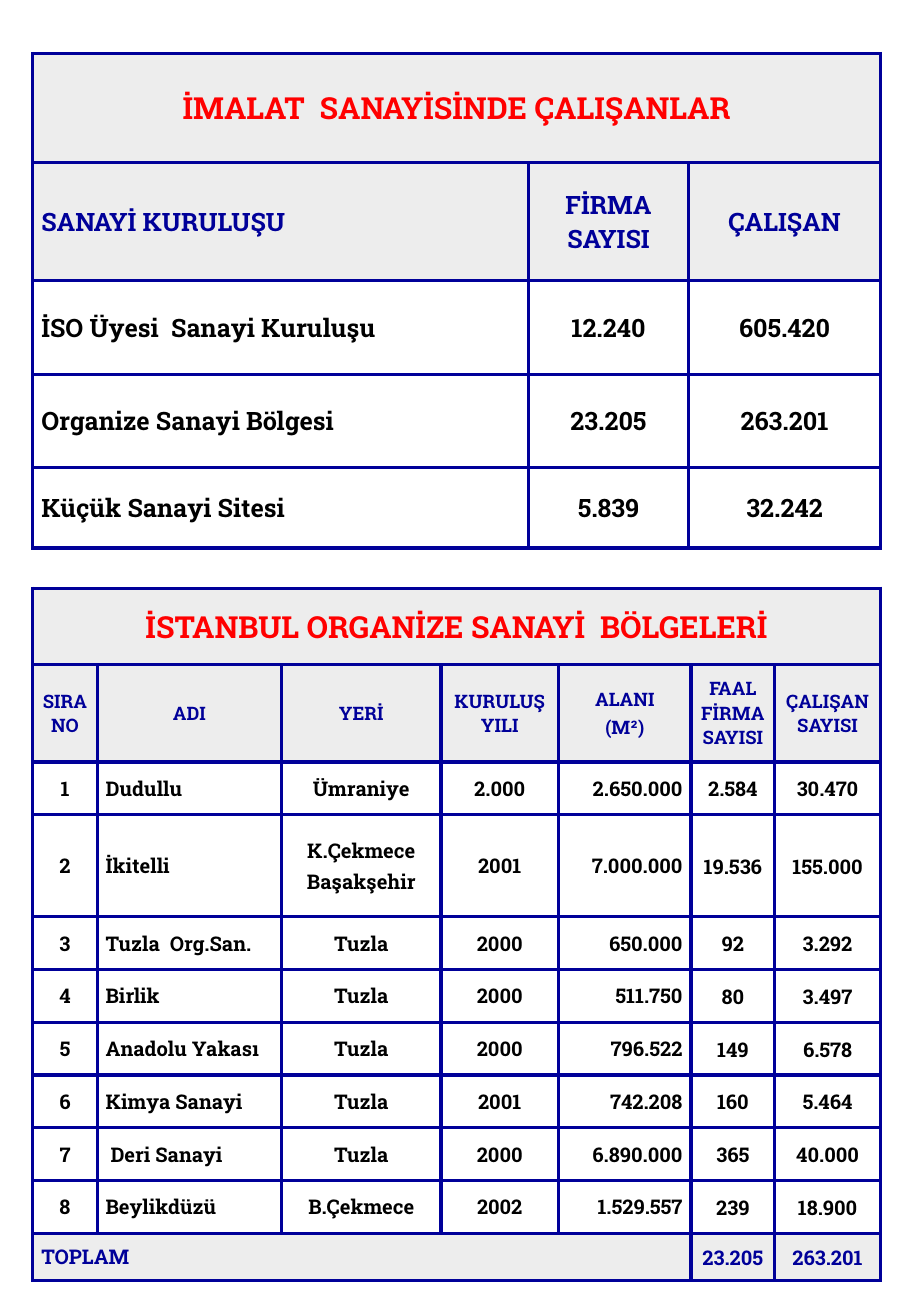
import dataclasses
import typing

import lxml.etree
import pptx
import pptx.dml.color
import pptx.enum.text
import pptx.oxml.ns
import pptx.util

Inches = pptx.util.Inches
Pt = pptx.util.Pt
RGB = pptx.dml.color.RGBColor
PP_ALIGN = pptx.enum.text.PP_ALIGN
ALIGN = {"l": PP_ALIGN.LEFT, "c": PP_ALIGN.CENTER, "r": PP_ALIGN.RIGHT}


@dataclasses.dataclass(frozen=True)
class Theme:
    font: str = "Roboto Slab"
    red: str = "FF0000"
    navy: str = "000099"
    black: str = "000000"
    grey: str = "EDEDED"
    white: str = "FFFFFF"
    title: int = 18
    large: int = 15
    body: int = 12
    small: int = 11
    border: float = 2.25


THEME = Theme()


@dataclasses.dataclass(frozen=True)
class Style:
    size: int
    color: str
    fill: str


TITLE = Style(THEME.title, THEME.red, THEME.grey)
LARGE_HEAD = Style(THEME.large, THEME.navy, THEME.grey)
LARGE_BODY = Style(THEME.large, THEME.black, THEME.white)
SMALL_HEAD = Style(THEME.small, THEME.navy, THEME.grey)
BODY = Style(THEME.body, THEME.black, THEME.white)
TOTAL = Style(THEME.body, THEME.navy, THEME.grey)


@dataclasses.dataclass(frozen=True)
class Row:
    height: float
    style: Style
    aligns: str
    texts: tuple[str, ...]
    span: int = 1
    tight_from: typing.Optional[int] = None


@dataclasses.dataclass(frozen=True)
class Grid:
    top: float
    widths: tuple[float, ...]
    rows: list[Row]
    margin: float
    space_before: int


LEFT = 0.27
PARK_ROW = 3.04 / 7
PARKS = [
    ("1", "Dudullu", "Ümraniye", "2.000", "2.650.000", "2.584", "30.470"),
    ("2", "İkitelli", "K.Çekmece\nBaşakşehir", "2001", "7.000.000", "19.536", "155.000"),
    ("3", "Tuzla  Org.San.", "Tuzla", "2000", "650.000", "92", "3.292"),
    ("4", "Birlik", "Tuzla", "2000", "511.750", "80", "3.497"),
    ("5", "Anadolu Yakası", "Tuzla", "2000", "796.522", "149", "6.578"),
    ("6", "Kimya Sanayi", "Tuzla", "2001", "742.208", "160", "5.464"),
    ("7", " Deri Sanayi", "Tuzla", "2000", "6.890.000", "365", "40.000"),
    ("8", "Beylikdüzü", "B.Çekmece", "2002", "1.529.557", "239", "18.900"),
]

EMPLOYEES = Grid(0.44, (4.08, 1.32, 1.58), [
    Row(0.9, TITLE, "c", ("İMALAT  SANAYİSİNDE ÇALIŞANLAR",), span=3),
    Row(0.97, LARGE_HEAD, "lcc", ("SANAYİ KURULUŞU", "FİRMA SAYISI", "ÇALIŞAN")),
    Row(0.77, LARGE_BODY, "lcc", ("İSO Üyesi  Sanayi Kuruluşu", "12.240", "605.420")),
    Row(0.77, LARGE_BODY, "lcc", ("Organize Sanayi Bölgesi", "23.205", "263.201")),
    Row(0.66, LARGE_BODY, "lcc", ("Küçük Sanayi Sitesi", "5.839", "32.242")),
], margin=0.04, space_before=0)

ZONES = Grid(4.84, (0.53, 1.52, 1.31, 0.97, 1.09, 0.69, 0.87), [
    Row(0.63, TITLE, "c", ("İSTANBUL ORGANİZE SANAYİ  BÖLGELERİ",), span=7),
    Row(0.8, SMALL_HEAD, "ccccccc", (
        "SIRA NO", "ADI", "YERİ", "KURULUŞ YILI", "ALANI\n(M²)",
        "FAAL FİRMA SAYISI", "ÇALIŞAN SAYISI")),
    *(Row(0.84 if "\n" in park[2] else PARK_ROW, BODY, "clccrcc", park, tight_from=5)
      for park in PARKS),
    Row(0.39, TOTAL, "lcc", ("TOPLAM", "23.205", "263.201"), span=5, tight_from=5),
], margin=0.03, space_before=20)


def add_borders(cell) -> None:
    qn = pptx.oxml.ns.qn
    tc_pr = cell._tc.get_or_add_tcPr()
    for side in ("lnL", "lnR", "lnT", "lnB"):
        ln = lxml.etree.SubElement(tc_pr, qn(f"a:{side}"), w=str(Pt(THEME.border)))
        fill = lxml.etree.SubElement(ln, qn("a:solidFill"))
        lxml.etree.SubElement(fill, qn("a:srgbClr"), val=THEME.navy)


def set_space_before(p, percent: int) -> None:
    qn = pptx.oxml.ns.qn
    before = lxml.etree.SubElement(p._p.get_or_add_pPr(), qn("a:spcBef"))
    lxml.etree.SubElement(before, qn("a:spcPct"), val=str(percent * 1000))


def write_cell(cell, text: str, align: str, style: Style, space_before: int) -> None:
    tf = cell.text_frame
    for i, line in enumerate(text.split("\n")):
        p = tf.add_paragraph() if i else tf.paragraphs[0]
        p.alignment = ALIGN[align]
        if space_before:
            set_space_before(p, space_before)
        r = p.add_run()
        r.text = line
        r.font.name = THEME.font
        r.font.size = Pt(style.size)
        r.font.bold = True
        r.font.color.rgb = RGB.from_string(style.color)


def format_cell(cell, fill: str, margin: float, tight: bool) -> None:
    add_borders(cell)
    cell.fill.solid()
    cell.fill.fore_color.rgb = RGB.from_string(fill)
    cell.vertical_anchor = pptx.enum.text.MSO_ANCHOR.MIDDLE
    cell.margin_left = cell.margin_right = Inches(0.01 if tight else 0.07)
    cell.margin_top = Inches(0.01 if tight else margin)
    cell.margin_bottom = Inches(0 if tight else margin)


def draw_grid(slide, grid: Grid) -> None:
    height = sum(row.height for row in grid.rows)
    table = slide.shapes.add_table(
        len(grid.rows), len(grid.widths), Inches(LEFT), Inches(grid.top),
        Inches(sum(grid.widths)), Inches(height)).table
    table.first_row = table.horz_banding = False
    for column, width in zip(table.columns, grid.widths):
        column.width = Inches(width)
    for y, row in enumerate(grid.rows):
        table.rows[y].height = Inches(row.height)
        tight = [row.tight_from is not None and x >= row.tight_from
                 for x in range(len(grid.widths))]
        for x, is_tight in enumerate(tight):
            format_cell(table.cell(y, x), row.style.fill, grid.margin, is_tight)
        if row.span > 1:
            table.cell(y, 0).merge(table.cell(y, row.span - 1))
        for i, (text, align) in enumerate(zip(row.texts, row.aligns)):
            x = i + row.span - 1 if i else 0
            space = 0 if tight[x] else grid.space_before
            write_cell(table.cell(y, x), text, align, row.style, space)


def main() -> None:
    prs = pptx.Presentation()
    prs.slide_width = Inches(7.5)
    prs.slide_height = Inches(10.83)
    slide = prs.slides.add_slide(prs.slide_layouts[6])
    for grid in (EMPLOYEES, ZONES):
        draw_grid(slide, grid)
    prs.save("out.pptx")


if __name__ == "__main__":
    main()
